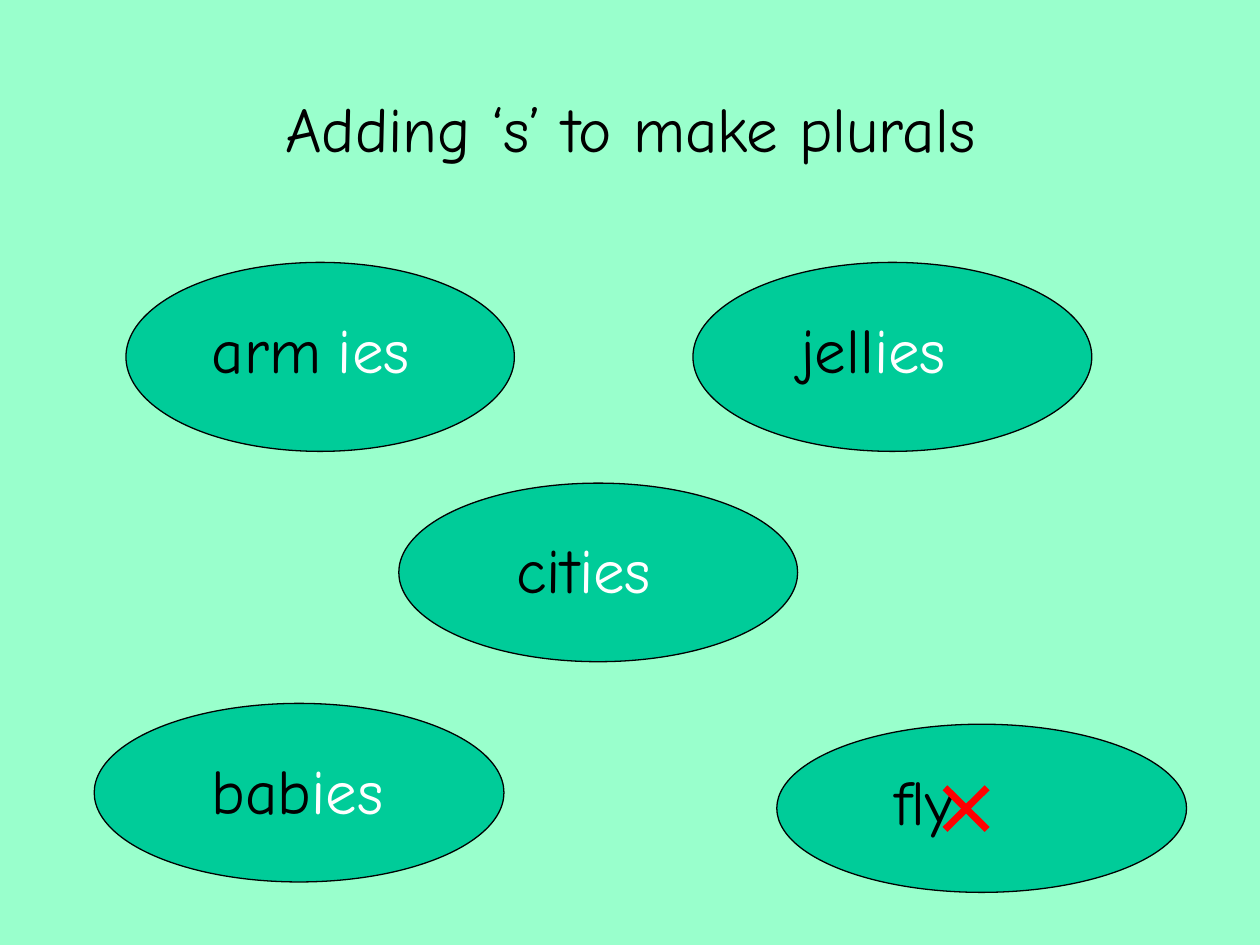
import pptx
import pptx.util
import pptx.dml.color
import pptx.enum.shapes
import pptx.enum.text
import pptx.oxml.ns
import lxml.etree

Cm = pptx.util.Cm
Pt = pptx.util.Pt
RGBColor = pptx.dml.color.RGBColor

MINT = RGBColor(0x99, 0xFF, 0xCC)
GREEN = RGBColor(0x00, 0xCC, 0x99)
BLACK = RGBColor(0x00, 0x00, 0x00)
WHITE = RGBColor(0xFF, 0xFF, 0xFF)
RED = RGBColor(0xFF, 0x00, 0x00)

presentation = pptx.Presentation()
presentation.slide_width = Cm(25.4)
presentation.slide_height = Cm(19.05)
slide = presentation.slides.add_slide(presentation.slide_layouts[6])
slide.background.fill.solid()
slide.background.fill.fore_color.rgb = MINT


def add_label(left, top, width, parts):
    """Add a one-line text box from (text, colour) parts; return its paragraph."""
    label = slide.shapes.add_textbox(Cm(left), Cm(top), Cm(width), Cm(1.78))
    label.text_frame.word_wrap = True
    label.text_frame.auto_size = pptx.enum.text.MSO_AUTO_SIZE.SHAPE_TO_FIT_TEXT
    paragraph = label.text_frame.paragraphs[0]
    for text, color in parts:
        run = paragraph.add_run()
        run.text = text
        run.font.name = "Comic Neue"
        run.font.size = Pt(36)
        run.font.color.rgb = color
    return paragraph


title = add_label(2.12, 1.69, 21.17, [("Adding ‘s’ to make plurals", BLACK)])
title.alignment = pptx.enum.text.PP_ALIGN.CENTER

# Left, top, width, height of the ovals
ovals = [
    (2.54, 5.29, 7.83, 3.81),
    (13.97, 5.29, 8.04, 3.81),
    (8.04, 9.74, 8.04, 3.6),
    (1.9, 14.18, 8.26, 3.6),
    (15.66, 14.6, 8.26, 3.39),
]
for bounds in ovals:
    oval = slide.shapes.add_shape(
        pptx.enum.shapes.MSO_SHAPE.OVAL, *[Cm(length) for length in bounds])
    oval.shadow.inherit = False
    oval.fill.solid()
    oval.fill.fore_color.rgb = GREEN
    oval.line.color.rgb = BLACK
    oval.line.width = Pt(0.75)

# Left, top, width of each word, then its stem and its plural ending
words = [
    (4.02, 6.14, 5.08, "arm", ""),
    (4.02, 15.03, 4.87, "bab", "ies"),
    (10.16, 10.58, 4.87, "cit", "ies"),
    (17.78, 15.24, 4.87, "fly", ""),
    (15.88, 6.14, 5.08, "jell", "ies"),
    (6.56, 6.14, 2.54, "", "ies"),
]
for left, top, width, stem, ending in words:
    parts = [(stem, BLACK), (ending, WHITE)]
    add_label(left, top, width, [part for part in parts if part[0]])

# Red cross after "fly"
cross_left, cross_right = 19.05, 19.9
cross_top, cross_bottom = 15.88, 16.72
for start, end in [(cross_bottom, cross_top), (cross_top, cross_bottom)]:
    stroke = slide.shapes.add_connector(
        pptx.enum.shapes.MSO_CONNECTOR.STRAIGHT,
        Cm(cross_left), Cm(start), Cm(cross_right), Cm(end))
    stroke.line.color.rgb = RED
    stroke.line.width = Pt(4)
    lxml.etree.SubElement(
        stroke.element.spPr, pptx.oxml.ns.qn("a:effectLst"))

presentation.save("out.pptx")
